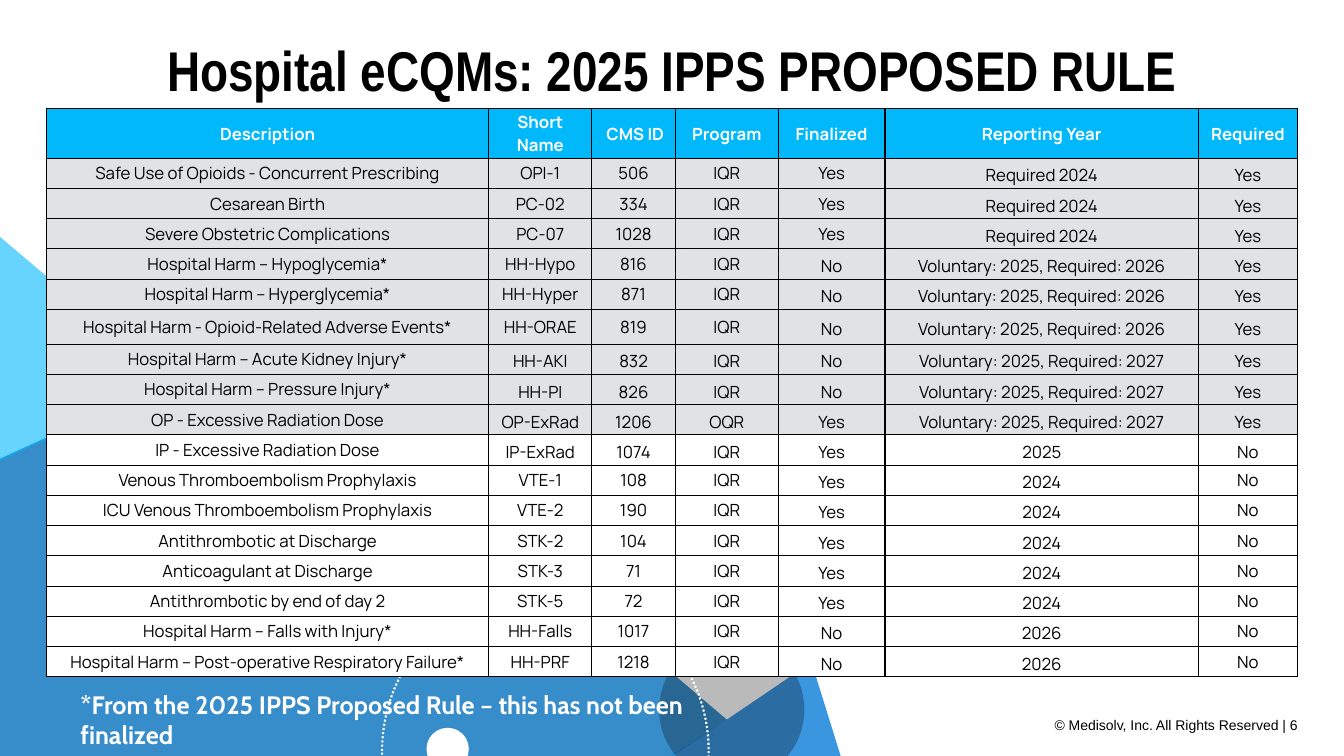
from dataclasses import dataclass

from lxml.etree import SubElement
from pptx import Presentation
from pptx.dml.color import RGBColor
from pptx.enum.dml import MSO_LINE
from pptx.enum.shapes import MSO_SHAPE
from pptx.enum.text import MSO_ANCHOR, PP_ALIGN
from pptx.oxml.ns import qn
from pptx.util import Emu, Inches, Pt


@dataclass(frozen=True)
class Theme:
    black: str = "000000"
    white: str = "FFFFFF"
    blue: str = "2683C6"
    cyan: str = "00B8FA"
    deep_blue: str = "0579D8"
    required_fill: str = "DFE3E5"
    title_font: str = "Arial Narrow"
    table_font: str = "Manrope"
    note_font: str = "Cabin"
    footer_font: str = "Arial"
    title_size: int = 40
    note_size: int = 18
    table_size: int = 12
    footer_size: int = 10
    border_width: float = 0.94


THEME = Theme()
SLIDE_WIDTH, SLIDE_HEIGHT = Inches(13.333), Inches(7.5)

# Table grid, in percent of the slide's width and height
COLUMN_SHARES = (32.93, 7.65, 6.23, 7.65, 7.95, 23.33, 7.35)
HEADER_SHARE, ROW_SHARE, TALL_ROW_SHARE = 6.53, 4, 4.6
TALL_ROW = 6
HEADINGS = ("Description", "Short Name", " CMS ID", "Program", "Finalized",
            "Reporting Year", "Required")
VOLUNTARY_2026 = "Voluntary: 2025, Required: 2026"
VOLUNTARY_2027 = "Voluntary: 2025, Required: 2027"
MEASURES = (
    ("Safe Use of Opioids - Concurrent Prescribing", "OPI-1", "506", "IQR", "Yes", "Required 2024", "Yes"),
    ("Cesarean Birth", "PC-02", "334", "IQR", "Yes", "Required 2024", "Yes"),
    ("Severe Obstetric Complications", "PC-07", "1028", "IQR", "Yes", "Required 2024", "Yes"),
    ("Hospital Harm – Hypoglycemia*", "HH-Hypo", "816", "IQR", "No", VOLUNTARY_2026, "Yes"),
    ("Hospital Harm – Hyperglycemia*", "HH-Hyper", "871", "IQR", "No", VOLUNTARY_2026, "Yes"),
    ("Hospital Harm - Opioid-Related Adverse Events*", "HH-ORAE", "819", "IQR", "No", VOLUNTARY_2026, "Yes"),
    ("Hospital Harm – Acute Kidney Injury*", "HH-AKI", "832", "IQR", "No", VOLUNTARY_2027, "Yes"),
    ("Hospital Harm – Pressure Injury*", "HH-PI", "826", "IQR", "No", VOLUNTARY_2027, "Yes"),
    ("OP - Excessive Radiation Dose", "OP-ExRad", "1206", "OQR", "Yes", VOLUNTARY_2027, "Yes"),
    ("IP - Excessive Radiation Dose", "IP-ExRad", "1074", "IQR", "Yes", "2025", "No"),
    ("Venous Thromboembolism Prophylaxis", "VTE-1", "108", "IQR", "Yes", "2024", "No"),
    ("ICU Venous Thromboembolism Prophylaxis", "VTE-2", "190", "IQR", "Yes", "2024", "No"),
    ("Antithrombotic at Discharge", "STK-2", "104", "IQR", "Yes", "2024", "No"),
    ("Anticoagulant at Discharge", "STK-3", "71", "IQR", "Yes", "2024", "No"),
    ("Antithrombotic by end of day 2", "STK-5", "72", "IQR", "Yes", "2024", "No"),
    ("Hospital Harm – Falls with Injury*", "HH-Falls", "1017", "IQR", "No", "2026", "No"),
    ("Hospital Harm – Post-operative Respiratory Failure*", "HH-PRF", "1218", "IQR", "No", "2026", "No"),
)
# Columns with no cell padding, by the last row of each block
FLUSH_COLUMNS = {3: (0, 1, 2, 3, 4), 6: (0, 1, 2, 3), 10: (0,), 17: (0, 1, 2, 3, 6)}


def across(share):
    return Emu(round(SLIDE_WIDTH * share / 100))


def down(share):
    return Emu(round(SLIDE_HEIGHT * share / 100))


def box(left, top, width, height):
    return across(left), down(top), across(width), down(height)


def set_attributes(target, values):
    for name, value in values.items():
        setattr(target, name, value)


def write(frame, text, font, size, color, bold=False, align=PP_ALIGN.CENTER):
    paragraph = frame.paragraphs[0]
    paragraph.alignment = align
    run = paragraph.add_run()
    run.text = text
    set_attributes(run.font, {"name": font, "size": Pt(size), "bold": bold})
    run.font.color.rgb = RGBColor.from_string(color)


def paint(shape, color, opacity=100):
    shape.shadow.inherit = False
    shape.line.fill.background()
    if color is None:
        shape.fill.background()
        return
    shape.fill.solid()
    shape.fill.fore_color.rgb = RGBColor.from_string(color)
    if opacity < 100:
        rgb = shape.fill._xPr.find(qn("a:solidFill")).find(qn("a:srgbClr"))
        SubElement(rgb, qn("a:alpha"), val=str(opacity * 1000))


def add_facet(slide, corners, color, opacity):
    points = [(across(x), down(y)) for x, y in corners]
    builder = slide.shapes.build_freeform(*points[0], scale=1.0)
    builder.add_line_segments(points[1:], close=True)
    paint(builder.convert_to_shape(), color, opacity)


def add_circle(slide, area, color, opacity=100):
    circle = slide.shapes.add_shape(MSO_SHAPE.OVAL, *box(*area))
    paint(circle, color, opacity)
    return circle


def add_label(slide, area, *text_format, **options):
    frame = slide.shapes.add_textbox(*box(*area)).text_frame
    frame.word_wrap = True
    write(frame, *text_format, **options)


def add_title(slide, text):
    title = slide.shapes.title
    left, top, width, height = box(1.65, 4, 96.68, 10.27)
    set_attributes(title, {"left": left, "top": top, "width": width, "height": height})
    set_attributes(title.text_frame, {"margin_left": 0, "margin_right": 0, "word_wrap": True,
                                      "vertical_anchor": MSO_ANCHOR.MIDDLE})
    write(title.text_frame, text, THEME.title_font, THEME.title_size, THEME.black, bold=True)


def add_backdrop(slide):
    add_facet(slide, [(20.4, 44.13), (29.85, 58.53), (54.08, 95.2), (50.03, 100), (0, 100), (0, 60.67)],
              THEME.blue, 92)
    add_facet(slide, [(12.75, 50.53), (0, 60.93), (0, 31.33)], THEME.cyan, 60)
    add_facet(slide, [(54.08, 95.2), (60.38, 87.6), (62.55, 100), (49.95, 100)], THEME.deep_blue, 78)
    add_circle(slide, (49.05, 84.27, 10.8, 19.2), THEME.black, 27)
    ring = add_circle(slide, (28.43, 77.73, 24.3, 43.2), None)
    ring.line.color.rgb = RGBColor.from_string(THEME.white)
    set_attributes(ring.line, {"width": Pt(1.5), "dash_style": MSO_LINE.ROUND_DOT})
    add_circle(slide, (31.73, 96.27, 3.15, 5.6), THEME.white)


def format_cell(cell, text, fill, color, margins, bold=False):
    left, top, right, bottom = map(Inches, margins)
    set_attributes(cell, {"margin_left": left, "margin_top": top, "margin_right": right,
                          "margin_bottom": bottom, "vertical_anchor": MSO_ANCHOR.MIDDLE})
    properties = cell._tc.get_or_add_tcPr()
    for side in ("a:lnL", "a:lnR", "a:lnT", "a:lnB"):
        line = SubElement(properties, qn(side), w=str(Pt(THEME.border_width)))
        SubElement(SubElement(line, qn("a:solidFill")), qn("a:srgbClr"), val=THEME.black)
    cell.fill.solid()
    cell.fill.fore_color.rgb = RGBColor.from_string(fill)
    write(cell.text_frame, text, THEME.table_font, THEME.table_size, color, bold)


def add_measure_table(slide):
    table = slide.shapes.add_table(len(MEASURES) + 1, len(HEADINGS), *box(3.45, 14.4, 93.08, 75.2)).table
    set_attributes(table, {"first_row": False, "horz_banding": False})
    for column, share in zip(table.columns, COLUMN_SHARES):
        column.width = across(share)
    for number, row in enumerate(table.rows):
        row.height = down(TALL_ROW_SHARE if number == TALL_ROW else ROW_SHARE)
    table.rows[0].height = down(HEADER_SHARE)

    # Header row
    for column, heading in enumerate(HEADINGS):
        format_cell(table.cell(0, column), heading, THEME.cyan, THEME.white, (0.09, 0.01, 0.09, 0.01), True)

    # Required measures are shaded
    for number, measure in enumerate(MEASURES, 1):
        fill = THEME.required_fill if measure[-1] == "Yes" else THEME.white
        flush = next(columns for last, columns in FLUSH_COLUMNS.items() if number <= last)
        for column, text in enumerate(measure):
            margins = (0, 0, 0, 0) if column in flush else (0.1, 0.05, 0.1, 0.01)
            format_cell(table.cell(number, column), text, fill, THEME.black, margins)


def main():
    presentation = Presentation()
    set_attributes(presentation, {"slide_width": SLIDE_WIDTH, "slide_height": SLIDE_HEIGHT})
    slide = presentation.slides.add_slide(presentation.slide_layouts[5])
    add_title(slide, "Hospital eCQMs: 2025 IPPS PROPOSED RULE")
    add_label(slide, (47.25, 94.13, 50.03, 3.6), "© Medisolv, Inc. All Rights Reserved | 6",
              THEME.footer_font, THEME.footer_size, THEME.black, align=PP_ALIGN.RIGHT)
    add_backdrop(slide)
    add_measure_table(slide)
    add_label(slide, (5.25, 90.53, 51.98, 5.33),
              "*From the 2025 IPPS Proposed Rule – this has not been finalized",
              THEME.note_font, THEME.note_size, THEME.white, bold=True, align=PP_ALIGN.LEFT)
    presentation.save("out.pptx")


if __name__ == "__main__":
    main()
